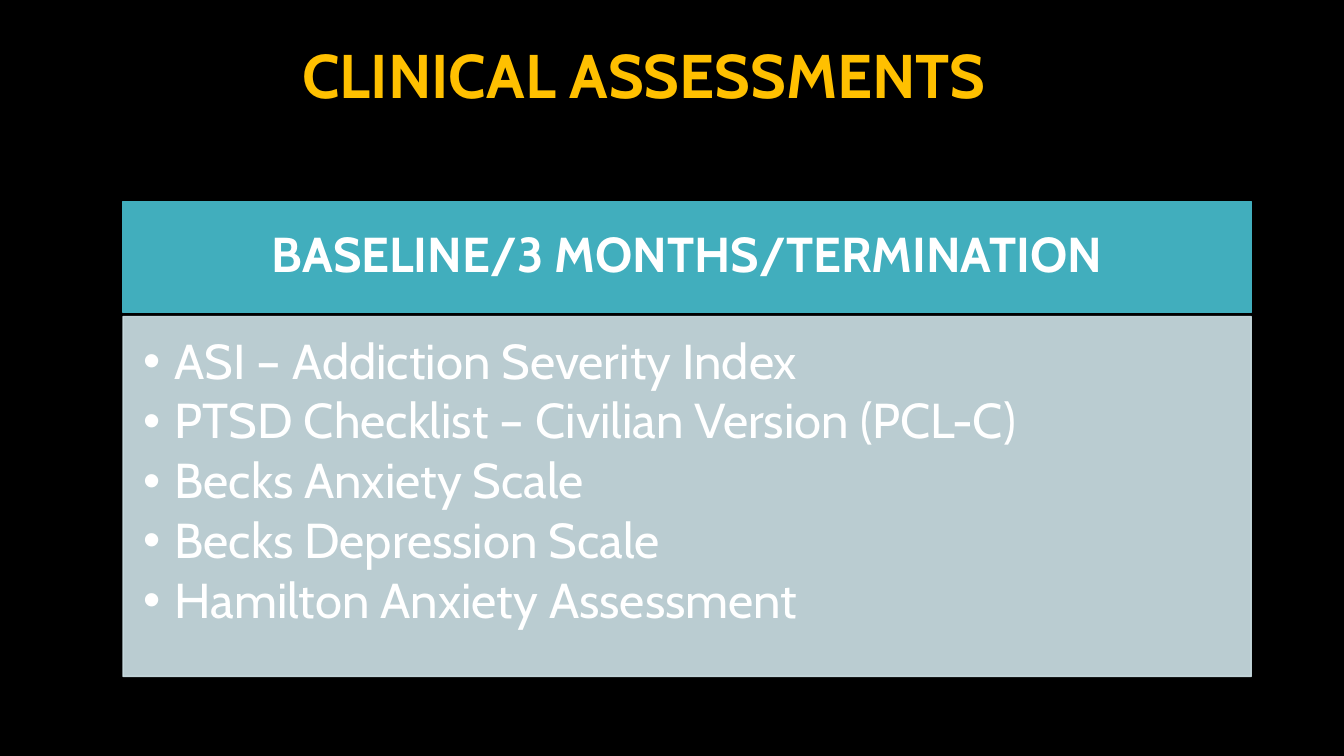
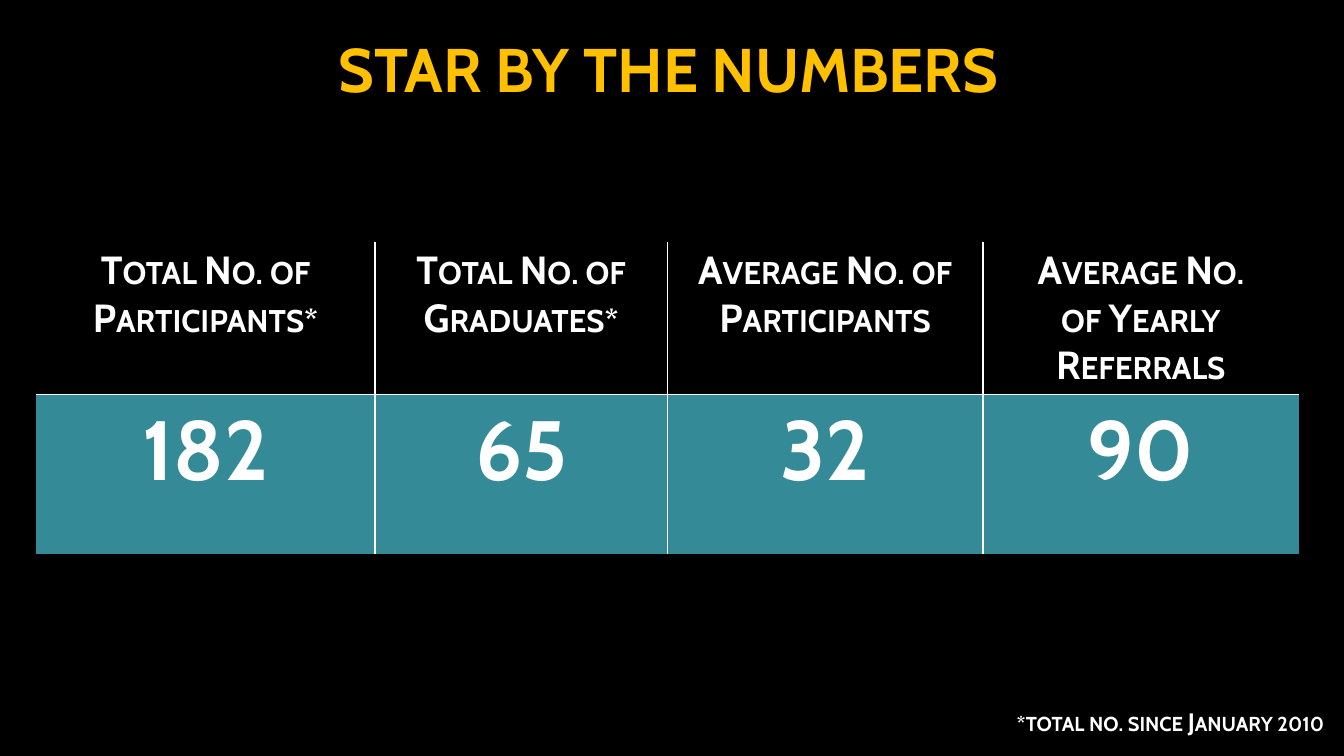
from lxml.etree import SubElement
from pptx import Presentation
from pptx.dml.color import RGBColor
from pptx.enum.shapes import MSO_SHAPE
from pptx.enum.text import MSO_ANCHOR, MSO_AUTO_SIZE, PP_ALIGN
from pptx.oxml.ns import qn
from pptx.util import Inches, Pt

COLORS = {
    "background": "000000",
    "title": "FFC000",
    "text": "FFFFFF",
    "header": "41AEBD",
    "panel": "CFE3E8",
    "numbers": "348B97",
}
FONT = "Cabin"
NO_GRID_STYLE = "{2D5ABB26-0587-4C30-8999-92F81FD0307C}"
CENTERED = {"alignment": PP_ALIGN.CENTER, "space_before": Pt(0)}
TIGHT = CENTERED | {"line_spacing": 0.9}
LIST_ITEM = TIGHT | {"alignment": PP_ALIGN.LEFT, "space_after": Pt(5)}
FRAME = {"word_wrap": True, "auto_size": MSO_AUTO_SIZE.NONE}
TITLE_SIZE, PANEL_SIZE, LABEL_SIZE, NUMBER_SIZE, NOTE_SIZE = 44, 35, 28, 60, 18

ASSESSMENTS = [
    "ASI – Addiction Severity Index",
    "PTSD Checklist – Civilian Version (PCL-C)",
    "Becks Anxiety Scale",
    "Becks Depression Scale",
    "Hamilton Anxiety Assessment",
]
STATISTICS = [
    (["Total No. of Participants*"], "182"),
    (["Total No. of Graduates*"], "65"),
    (["Average No. of Participants"], "32"),
    (["Average No.", "of Yearly Referrals"], "90"),
]
COLUMN_WIDTHS = [3.36, 2.9, 3.13, 3.13]
ROW_HEIGHTS = [1.51, 1.58]


def apply_format(target, values):
    """Set each named attribute on the target."""
    for name, value in values.items():
        setattr(target, name, value)


def rgb(color):
    """Return a palette colour by name."""
    return RGBColor.from_string(COLORS[color])


def place(shape, left, top, width, height):
    """Move and size a shape, in inches."""
    box = {"left": left, "top": top, "width": width, "height": height}
    apply_format(shape, {name: Inches(value) for name, value in box.items()})


def set_margins(frame, left, top, right, bottom):
    """Set the inner margins of a text frame, in inches."""
    margins = {"left": left, "top": top, "right": right, "bottom": bottom}
    apply_format(frame, {f"margin_{side}": Inches(value) for side, value in margins.items()})


def write(frame, lines, size, layout, color="text", bold=True, small_caps=False):
    """Fill a text frame with one formatted paragraph per line."""
    for index, line in enumerate(lines):
        paragraph = frame.paragraphs[0] if index == 0 else frame.add_paragraph()
        apply_format(paragraph, layout)
        run = paragraph.add_run()
        run.text = line
        apply_format(run.font, {"name": FONT, "size": Pt(size), "bold": bold})
        run.font.color.rgb = rgb(color)
        if small_caps:
            run.font._element.set("cap", "small")


def add_bullet(paragraph, indent):
    """Give a paragraph a round bullet with a hanging indent."""
    properties = paragraph._p.get_or_add_pPr()
    properties.set("marL", str(Inches(indent)))
    properties.set("indent", str(-Inches(indent)))
    SubElement(properties, qn("a:buChar"), char="•")


def paint(shape, color, opacity=100):
    """Fill and outline a shape in one colour."""
    shape.fill.solid()
    shape.fill.fore_color.rgb = rgb(color)
    shape.line.color.rgb = rgb(color)
    shape.line.width = Pt(1)
    if opacity < 100:
        for element in shape._element.spPr.iter(qn("a:srgbClr")):
            SubElement(element, qn("a:alpha"), val=str(opacity * 1000))


def set_title(slide, text, box):
    """Write the slide title in the shared style."""
    title = slide.shapes.title
    place(title, *box)
    apply_format(title.text_frame, FRAME | {"vertical_anchor": MSO_ANCHOR.MIDDLE})
    write(title.text_frame, [text], TITLE_SIZE, TIGHT, "title")


def add_header(slide, text, box):
    """Add the coloured band above the list."""
    header = slide.shapes.add_shape(MSO_SHAPE.RECTANGLE, *map(Inches, box))
    header.shadow.inherit = False
    paint(header, "header")
    frame = header.text_frame
    apply_format(frame, FRAME | {"vertical_anchor": MSO_ANCHOR.MIDDLE})
    set_margins(frame, 0.27, 0.16, 0.27, 0.16)
    write(frame, [text], PANEL_SIZE, TIGHT)


def fill_list(slide, items, box):
    """Turn the body placeholder into a bulleted panel."""
    body = slide.placeholders[1]
    place(body, *box)
    paint(body, "panel", 90)
    frame = body.text_frame
    apply_format(frame, FRAME | {"vertical_anchor": MSO_ANCHOR.TOP})
    set_margins(frame, 0.2, 0.2, 0.27, 0.31)
    write(frame, items, PANEL_SIZE, LIST_ITEM, bold=False)
    for paragraph in frame.paragraphs:
        add_bullet(paragraph, 0.31)


def add_borders(cell, sides):
    """Draw thin lines on the given sides of a cell."""
    properties = cell._tc.get_or_add_tcPr()
    for index, side in enumerate(sides):
        line = SubElement(properties, qn(f"a:ln{side}"), w=str(Pt(1)))
        fill = SubElement(line, qn("a:solidFill"))
        SubElement(fill, qn("a:srgbClr"), val=COLORS["text"])
        properties.insert(index, line)


def add_statistics(slide, left, top):
    """Add the table of labels and numbers with inner rules only."""
    size = (sum(COLUMN_WIDTHS), sum(ROW_HEIGHTS))
    graphic = slide.shapes.add_table(
        len(ROW_HEIGHTS), len(COLUMN_WIDTHS), *map(Inches, (left, top, *size))
    )
    table = graphic.table
    table._tbl.tblPr.find(qn("a:tableStyleId")).text = NO_GRID_STYLE
    apply_format(table, {"first_row": False, "horz_banding": False})
    for row, height in zip(table.rows, ROW_HEIGHTS):
        row.height = Inches(height)
    last = len(STATISTICS) - 1
    for index, (label, number) in enumerate(STATISTICS):
        table.columns[index].width = Inches(COLUMN_WIDTHS[index])
        sides = ("L" if index > 0 else "") + ("R" if index < last else "")
        label_cell, number_cell = table.cell(0, index), table.cell(1, index)
        write(label_cell.text_frame, label, LABEL_SIZE, CENTERED, small_caps=True)
        write(number_cell.text_frame, [number], NUMBER_SIZE, CENTERED)
        for cell, color, edge in (
            (label_cell, "background", "B"),
            (number_cell, "numbers", "T"),
        ):
            cell.fill.solid()
            cell.fill.fore_color.rgb = rgb(color)
            add_borders(cell, sides + edge)


def add_note(slide, text, box):
    """Add a right-aligned footnote."""
    frame = slide.shapes.add_textbox(*map(Inches, box)).text_frame
    apply_format(frame, FRAME)
    write(frame, [text], NOTE_SIZE, {"alignment": PP_ALIGN.RIGHT}, small_caps=True)


def build_assessments(presentation):
    """Build the slide of clinical assessments."""
    slide = presentation.slides.add_slide(presentation.slide_layouts[1])
    set_title(slide, "CLINICAL ASSESSMENTS", (0.27, 0.14, 12.24, 1.28))
    add_header(slide, "BASELINE/3 MONTHS/TERMINATION", (1.22, 2, 11.19, 1.1))
    fill_list(slide, ASSESSMENTS, (1.22, 3.14, 11.19, 3.57))


def build_numbers(presentation):
    """Build the slide of programme numbers."""
    slide = presentation.slides.add_slide(presentation.slide_layouts[5])
    set_title(slide, "STAR BY THE NUMBERS", (0.88, 0.08, 11.5, 1.28))
    add_statistics(slide, 0.36, 2.4)
    add_note(slide, "*total no. since January 2010", (8.98, 6.96, 4.25, 0.5))


def main():
    """Create and save the presentation."""
    presentation = Presentation()
    apply_format(presentation, {"slide_width": Inches(13.33), "slide_height": Inches(7.5)})
    background = presentation.slide_master.background.fill
    background.solid()
    background.fore_color.rgb = rgb("background")
    build_assessments(presentation)
    build_numbers(presentation)
    presentation.save("out.pptx")


if __name__ == "__main__":
    main()
